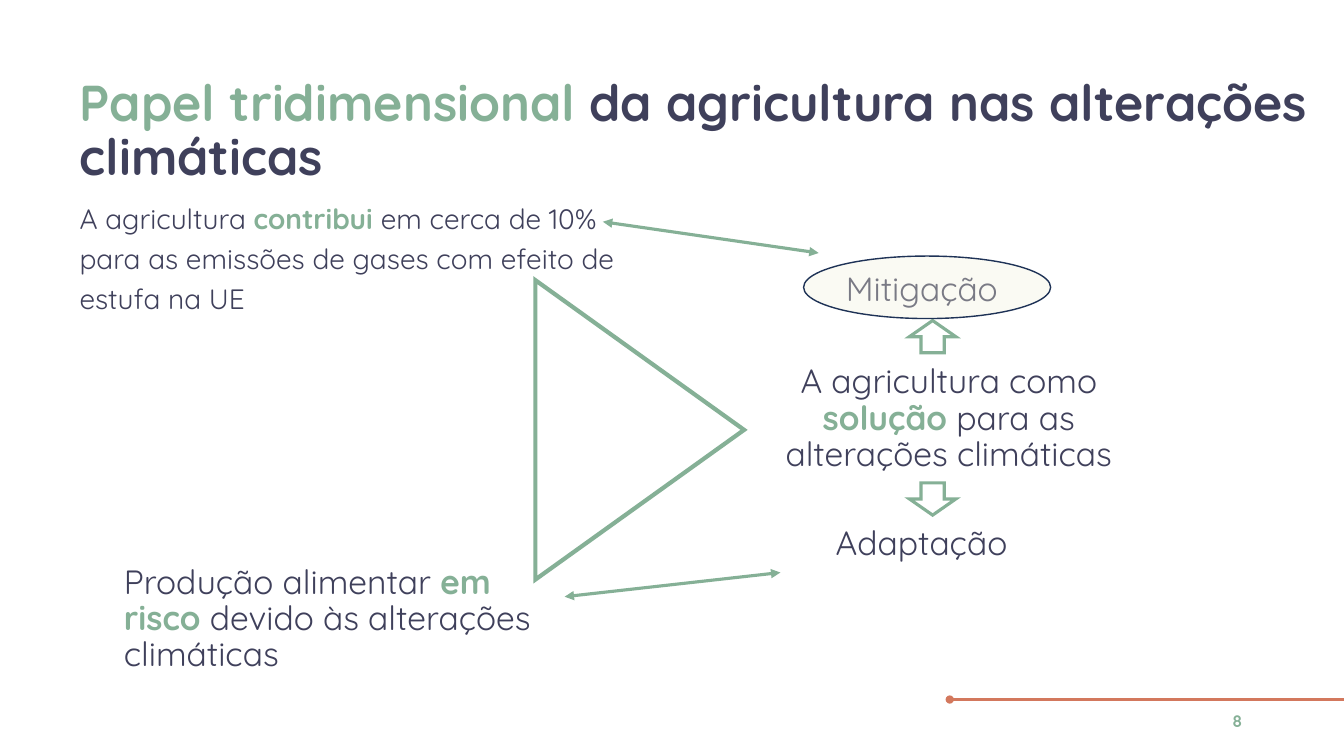
from lxml.etree import SubElement
from pptx import Presentation
from pptx.dml.color import RGBColor
from pptx.enum.shapes import MSO_CONNECTOR, MSO_SHAPE
from pptx.enum.text import MSO_ANCHOR, MSO_AUTO_SIZE, PP_ALIGN
from pptx.oxml.ns import qn
from pptx.util import Inches, Pt

GREEN = RGBColor(0x85, 0xB0, 0x96)
INK = RGBColor(0x3F, 0x40, 0x5B)
ORANGE = RGBColor(0xD3, 0x78, 0x5D)
NAVY = RGBColor(0x1E, 0x32, 0x56)
CREAM = RGBColor(0xF2, 0xF1, 0xDB)


def write(frame, pieces, size, spacing, align=PP_ALIGN.LEFT):
    frame.word_wrap = True
    frame.auto_size = MSO_AUTO_SIZE.NONE
    frame.vertical_anchor = MSO_ANCHOR.TOP
    paragraph = frame.paragraphs[0]
    paragraph.alignment = align
    paragraph.line_spacing = spacing
    paragraph.space_before = Pt(0)
    for words, color, bold in pieces:
        run = paragraph.add_run()
        run.text = words
        run.font.name = "Quicksand"
        run.font.size = Pt(size)
        run.font.bold = bold
        run.font.color.rgb = color


def connect(start, end, color, width, ends):
    connector = slide.shapes.add_connector(
        MSO_CONNECTOR.STRAIGHT, *map(Inches, start + end))
    connector.line.color.rgb = color
    connector.line.width = Pt(width)
    outline = connector.line._get_or_add_ln()
    for tag, kind in ends.items():
        SubElement(outline, qn(f"a:{tag}"), type=kind)
    SubElement(connector._element.spPr, qn("a:effectLst"))


presentation = Presentation()
presentation.slide_width = Inches(13.33)
presentation.slide_height = Inches(7.5)
slide = presentation.slides.add_slide(presentation.slide_layouts[5])

connect((9.42, 6.94), (13.33, 6.94), ORANGE, 1.5, {"headEnd": "oval"})

title = slide.shapes.title
title.left, title.top, title.width, title.height = map(Inches, (0.69, 0.72, 12.71, 0.9))
write(title.text_frame, [("Papel tridimensional ", GREEN, True),
                         ("da agricultura nas alterações climáticas", INK, True)], 36, 0.9)

statements = [
    ((0.69, 1.88, 5.51, 0.9), 20, 1.2, PP_ALIGN.LEFT,
     [("A agricultura ", INK, False), ("contribui ", GREEN, True),
      ("em cerca de 10% para as emissões de gases com efeito de estufa na UE", INK, False)]),
    ((1.13, 5.56, 4.42, 1.19), 24, 0.9, PP_ALIGN.LEFT,
     [("Produção alimentar ", INK, False), ("em risco ", GREEN, True),
      ("devido às alterações climáticas", INK, False)]),
    ((7.37, 3.57, 4.08, 1.19), 24, 0.9, PP_ALIGN.CENTER,
     [("A agricultura como ", INK, False), ("solução ", GREEN, True),
      ("para as alterações climáticas", INK, False)]),
    ((8.29, 2.65, 4.59, 0.46), 24, 0.9, PP_ALIGN.LEFT, [("Mitigação", INK, False)]),
    ((8.19, 5.17, 3.79, 0.46), 24, 0.9, PP_ALIGN.LEFT, [("Adaptação", INK, False)]),
    ((9.42, 6.95, 3, 0.4), 12, 1.0, PP_ALIGN.RIGHT, [("8", GREEN, True)]),
]
for place, size, spacing, align, pieces in statements:
    statement = slide.shapes.add_textbox(*map(Inches, place))
    write(statement.text_frame, pieces, size, spacing, align)
page_number = statement
page_number.text_frame.vertical_anchor = MSO_ANCHOR.MIDDLE

for kind, place, rotation, width in [
    (MSO_SHAPE.ISOSCELES_TRIANGLE, (4.86, 3.23, 2.97, 2.07), 90, 3),
    (MSO_SHAPE.RIGHT_ARROW, (9.09, 3.11, 0.32, 0.46), 270, 2.25),
    (MSO_SHAPE.RIGHT_ARROW, (9.09, 4.72, 0.32, 0.46), 90, 2.25),
]:
    pointer = slide.shapes.add_shape(kind, *map(Inches, place))
    pointer.rotation = rotation
    pointer.shadow.inherit = False
    pointer.fill.background()
    pointer.line.color.rgb = GREEN
    pointer.line.width = Pt(width)
    SubElement(pointer.line._get_or_add_ln(), qn("a:miter"), lim="800000")

for start, end in [((5.6, 5.92), (7.74, 5.68)), ((5.98, 2.2), (8.12, 2.51))]:
    connect(start, end, GREEN, 2.25, {"headEnd": "triangle", "tailEnd": "triangle"})

mitigation_highlight = slide.shapes.add_shape(
    MSO_SHAPE.OVAL, *map(Inches, (7.97, 2.54, 2.45, 0.62)))
mitigation_highlight.shadow.inherit = False
mitigation_highlight.fill.solid()
mitigation_highlight.fill.fore_color.rgb = CREAM
tint = mitigation_highlight._element.spPr.find(qn("a:solidFill")).find(qn("a:srgbClr"))
SubElement(tint, qn("a:alpha"), val="33000")
mitigation_highlight.line.color.rgb = NAVY
mitigation_highlight.line.width = Pt(1)

presentation.save("out.pptx")
